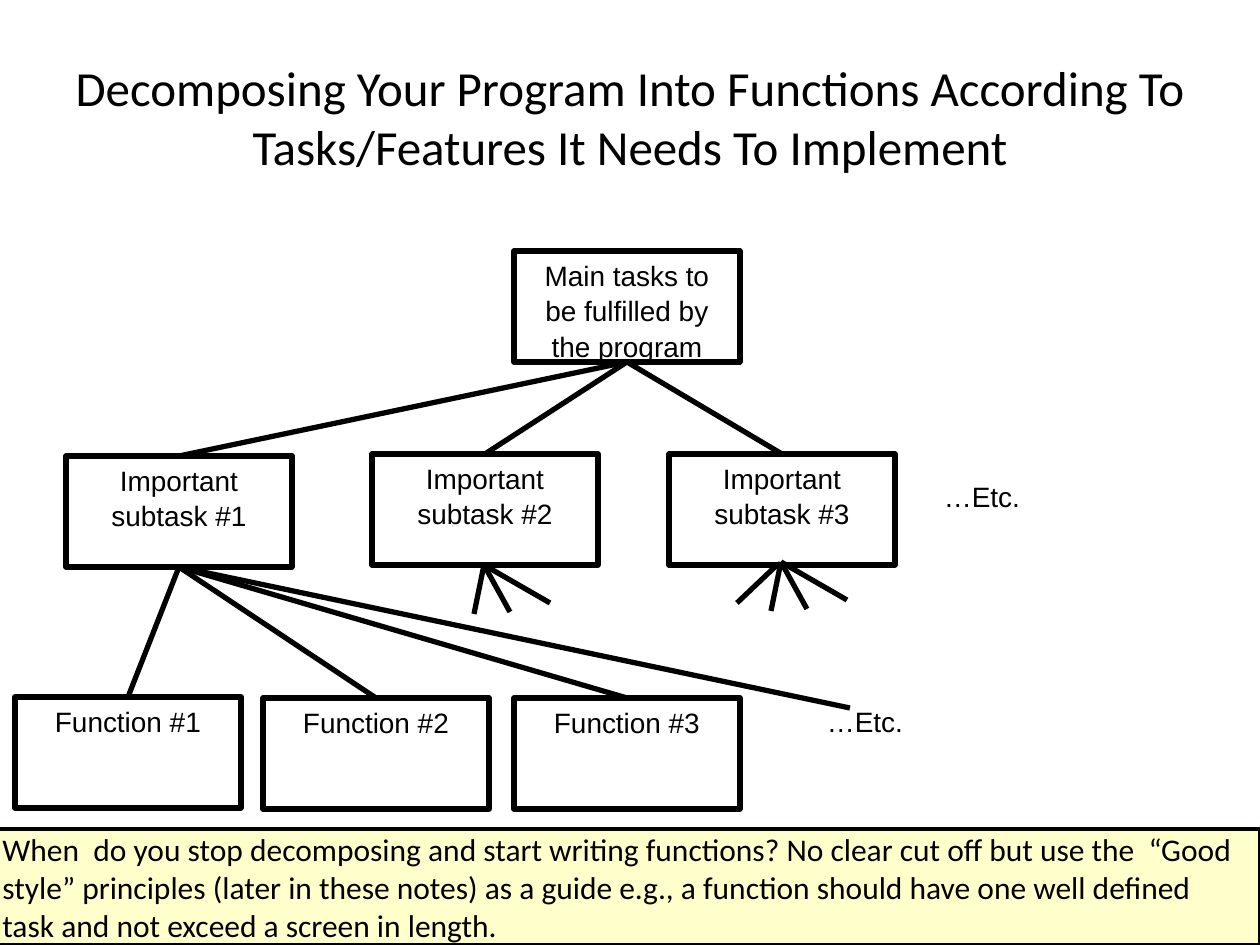
from lxml.etree import SubElement
from pptx import Presentation
from pptx.dml.color import RGBColor
from pptx.enum.shapes import MSO_CONNECTOR, MSO_SHAPE
from pptx.enum.text import MSO_ANCHOR, PP_ALIGN
from pptx.oxml.ns import qn
from pptx.util import Pt

SCALE = 914400 // 126
COLORS = {"ink": "000000", "note": "FFFFCC"}
BOX_SIZE = (226, 111)
ETC_SIZE = (154, 91)
BOTTOM, TOP = 2, 0

TITLE = ("Decomposing Your Program Into Functions According To "
         "Tasks/Features It Needs To Implement")
BOXES = {
    "main": ("Main tasks to be fulfilled by the program", 514, 251),
    "subtask 1": ("Important subtask #1", 66, 456),
    "subtask 2": ("Important subtask #2", 372, 454),
    "subtask 3": ("Important subtask #3", 669, 454),
    "function 1": ("Function #1", 15, 697),
    "function 2": ("Function #2", 263, 698),
    "function 3": ("Function #3", 514, 698),
}
CHILDREN = {
    "main": ["subtask 1", "subtask 2", "subtask 3"],
    "subtask 1": ["function 1", "function 2", "function 3"],
}
ETC_LABELS = [("…Etc.", 905, 472), ("…Etc.", 788, 697)]
ETC_LINE_END = (850, 708)
STUBS = [(-10, 49), (26, 47), (66, 38)]
STUB_STARTS = [(484, 565), (781, 562)]
EXTRA_STUB = ((777, 565), (737, 603))
NOTE = ("When  do you stop decomposing and start writing functions? No clear cut off "
        "but use the  “Good style” principles (later in these notes) as a guide e.g., "
        "a function should have one well defined task and not exceed a screen in length.")

deck = Presentation()
deck.slide_width, deck.slide_height = 1260 * SCALE, 945 * SCALE
slide = deck.slides.add_slide(deck.slide_layouts[5])
shapes = slide.shapes


def px(*lengths):
    return [length * SCALE for length in lengths]


def color(name):
    return RGBColor.from_string(COLORS[name])


def write(shape, text, size, font, align, anchor, spacing=1.0):
    frame = shape.text_frame
    frame.word_wrap = True
    frame.vertical_anchor = anchor
    para = frame.paragraphs[0]
    para.text = text
    para.alignment = align
    para.line_spacing = spacing
    para.font.size, para.font.name = Pt(size), font
    para.font.color.rgb = color("ink")


def write_label(shape, text):
    write(shape, text, 16, "Arial", PP_ALIGN.CENTER, MSO_ANCHOR.TOP, 1.05)


def add_box(left, top, width, height, line_width, fill=None):
    box = shapes.add_shape(MSO_SHAPE.RECTANGLE, *px(left, top, width, height))
    box.shadow.inherit = False
    if fill:
        box.fill.solid()
        box.fill.fore_color.rgb = color(fill)
    else:
        box.fill.background()
    box.line.color.rgb = color("ink")
    box.line.width = Pt(line_width)
    return box


def add_line(start=(0, 0), end=(0, 0), parent=None, child=None):
    """Draw a line between points, or joined to the boxes that are given."""
    line = shapes.add_connector(MSO_CONNECTOR.STRAIGHT, *px(*start, *end))
    if parent is not None:
        line.begin_connect(parent, BOTTOM)
    if child is not None:
        line.end_connect(child, TOP)
    line.line.color.rgb = color("ink")
    line.line.width = Pt(3)
    SubElement(line._element.spPr, qn("a:effectLst"))


title = shapes.title
title.left, title.top, title.width, title.height = px(63, 38, 1134, 157)
write(title, TITLE, 28, "Calibri", PP_ALIGN.CENTER, MSO_ANCHOR.MIDDLE)

boxes = {}
for name, (text, left, top) in BOXES.items():
    boxes[name] = add_box(left, top, *BOX_SIZE, 3)
    write_label(boxes[name], text)

for text, left, top in ETC_LABELS:
    write_label(shapes.add_textbox(*px(left, top, *ETC_SIZE)), text)

for parent, children in CHILDREN.items():
    for child in children:
        add_line(parent=boxes[parent], child=boxes[child])
add_line(end=ETC_LINE_END, parent=boxes["subtask 1"])

for x, y in STUB_STARTS:
    for dx, dy in STUBS:
        add_line((x, y), (x + dx, y + dy))
add_line(*EXTRA_STUB)

note = add_box(-10, 829, 1270, 116, 2, "note")
write(note, NOTE, 18, "Calibri", PP_ALIGN.LEFT, MSO_ANCHOR.MIDDLE)

deck.save("out.pptx")
